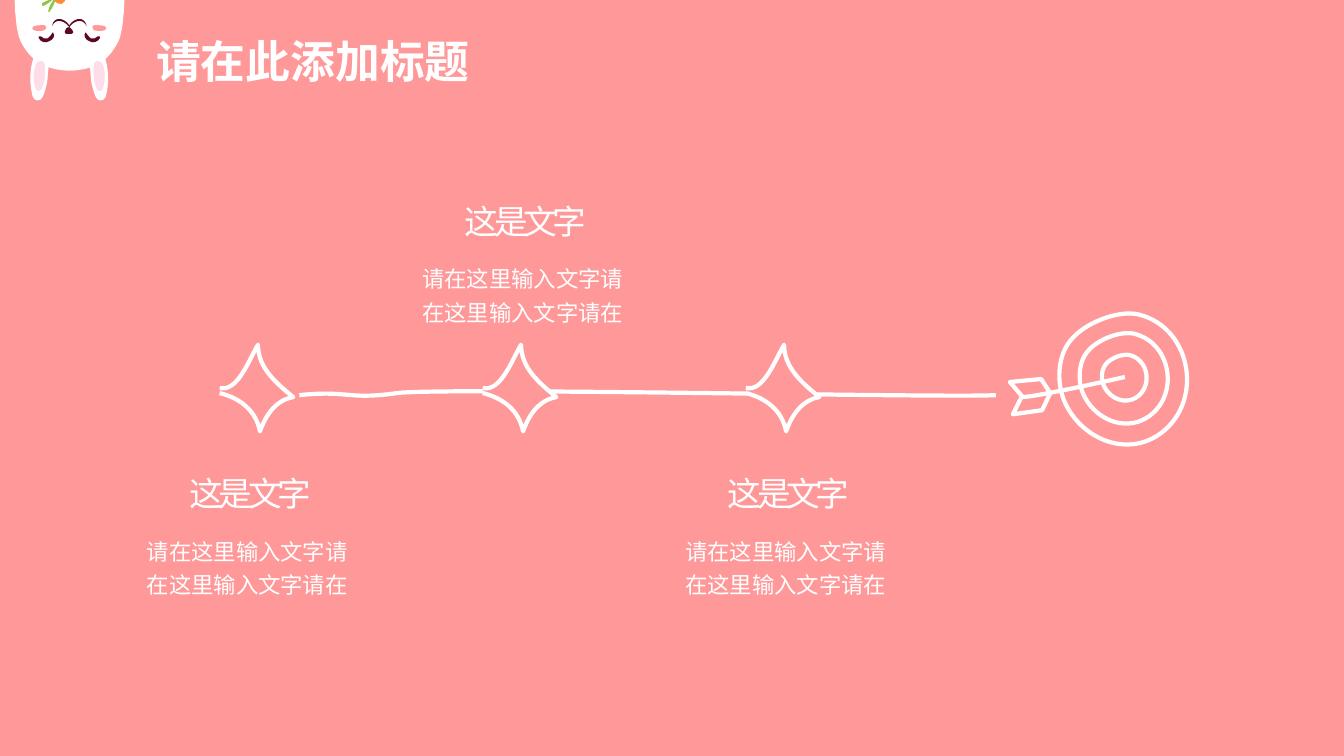
"""Build a pink timeline slide with three stars, a target and a rabbit."""
import pptx
import pptx.dml.color
import pptx.enum.text
import pptx.oxml.ns
import pptx.util
from lxml import etree

Cm = pptx.util.Cm
Pt = pptx.util.Pt
qn = pptx.oxml.ns.qn
INCH = 2.54
FONT = "Noto Sans CJK JP"
HUES = {
    "pink": "FF9899",
    "white": "FFFFFF",
    "wine": "5B0822",
    "blush": "FFDCEA",
    "leaf": "8DC541",
    "carrot": "FF8D35",
}
RGB = {name: pptx.dml.color.RGBColor.from_string(code) for name, code in HUES.items()}


def draw(nums, fill=None, line=None, width=3, bend=True):
    """Draw an outline in hundredths of an inch; bend joins it by cubic curves."""
    dots = [(Cm(x * INCH / 100), Cm(y * INCH / 100)) for x, y in zip(nums[::2], nums[1::2])]
    pen = slide.shapes.build_freeform(*dots[0], scale=1.0)
    pen.add_line_segments(dots[1:], close=dots[0] == dots[-1])
    shape = pen.convert_to_shape()
    shape.shadow.inherit = False
    if bend:
        legs = list(shape._element.iter(qn("a:lnTo")))
        for i in range(0, len(legs), 3):
            curve = etree.Element(qn("a:cubicBezTo"))
            legs[i].addprevious(curve)
            for leg in legs[i:i + 3]:
                curve.append(leg[0])
                leg.getparent().remove(leg)
    if fill:
        shape.fill.solid()
        shape.fill.fore_color.rgb = RGB[fill]
    else:
        shape.fill.background()
    if line:
        shape.line.color.rgb = RGB[line]
        shape.line.width = Pt(width)
    else:
        shape.line.fill.background()


def write(shape, text, size, align, bold=False, space=None, lead=None):
    """Fill a shape with one styled white paragraph."""
    frame = shape.text_frame
    frame.word_wrap = True
    frame.auto_size = pptx.enum.text.MSO_AUTO_SIZE.NONE
    frame.vertical_anchor = pptx.enum.text.MSO_ANCHOR.TOP
    frame.text = text
    para = frame.paragraphs[0]
    para.alignment = align
    if lead:
        para.line_spacing = lead
    run = para.runs[0]
    run.font.size = Pt(size)
    run.font.bold = bold
    run.font.name = FONT
    run.font.color.rgb = RGB["white"]
    props = run.font._element
    etree.SubElement(props, qn("a:ea")).set("typeface", FONT)
    if space:
        props.set("spc", str(space))


deck = pptx.Presentation()
deck.slide_width = Cm(33.87)
deck.slide_height = Cm(19.05)
slide = deck.slides.add_slide(deck.slide_layouts[5])
slide.background.fill.solid()
slide.background.fill.fore_color.rgb = RGB["pink"]
LEFT = pptx.enum.text.PP_ALIGN.LEFT
MID = pptx.enum.text.PP_ALIGN.CENTER

title = slide.shapes.title
title.left, title.top, title.width, title.height = Cm(3.56), Cm(0.71), Cm(8.66), Cm(1.63)
write(title, "请在此添加标题", 32, MID, bold=True)

body = [15, 11, 16, 18, 16, 26, 18, 33, 19, 40, 24, 48, 29, 54, 39, 65, 51, 69, 65, 70,
        67, 70, 72, 70, 73, 70, 87, 69, 100, 65, 109, 54, 114, 48, 119, 40, 120, 33,
        122, 26, 122, 18, 123, 11, 124, -10, 124, -30, 119, -41,
        113, -46, 105, -50, 88, -50, 82, -50, 56, -50, 50, -50,
        33, -50, 25, -46, 19, -41, 14, -30, 14, -10, 15, 11]
draw(body, "white")

nose = [65, 32, 65, 33, 66, 33, 68, 33, 70, 33, 72, 33, 72, 32,
        72, 31, 70, 29, 69, 28, 67, 27, 65, 30, 65, 32]
draw(nose, "wine", "wine", 1.13)

smile = [86, 26, 85, 21, 82, 18, 77, 19, 73, 20, 68, 24, 68, 28,
         70, 25, 73, 22, 77, 21, 81, 20, 84, 22, 86, 26]
eye = [97, 36, 95, 38, 93, 39, 90, 38, 87, 36, 87, 34, 85, 32,
       82, 35, 85, 40, 89, 41, 92, 43, 97, 42, 99, 38, 100, 37, 99, 35, 97, 36]
cheek = [104, 26, 101, 25, 97, 25, 94, 25, 91, 25, 91, 29, 93, 30,
         97, 31, 101, 31, 104, 30, 106, 29, 106, 27, 104, 26]
ear = [90, 73, 90, 81, 92, 89, 95, 96, 97, 101, 103, 101, 105, 96,
       107, 88, 108, 79, 107, 71, 106, 63, 105, 55, 98, 50,
       96, 48, 93, 51, 92, 53, 88, 58, 89, 67, 90, 73]
lobe = [93, 74, 93, 79, 94, 83, 96, 88, 97, 91, 102, 91, 102, 88,
        104, 83, 104, 78, 104, 72, 103, 69, 103, 62, 99, 61, 91, 58, 93, 70, 93, 74]
for part, hue in ((smile, "wine"), (eye, "wine"), (cheek, "pink"), (ear, "white"), (lobe, "blush")):
    draw(part, hue)
    draw([n if i % 2 else 137.5 - n for i, n in enumerate(part)], hue)

stem = [54, -2, 52, 2, 48, 7, 48, 11, 47, 12, 49, 12, 49, 12,
        52, 8, 55, 2, 55, -2, 55, -2, 54, -2, 54, -2]
frond = [53, -4, 50, 0, 46, 1, 42, 3, 41, 4, 42, 7, 43, 6,
         47, 4, 52, 1, 54, -3, 54, -4, 53, -4, 53, -4]
root = [54, 1, 56, 3, 58, 4, 61, 4, 64, 3, 65, 0, 66, -3, 68, -7, 69, -11, 71, -15,
        73, -18, 76, -24, 75, -28, 74, -36, 61, -24, 58, -21,
        56, -19, 53, -18, 51, -16, 45, -10, 49, -3, 54, 1]
draw(stem, "leaf")
draw(frond, "leaf")
draw(root, "carrot")

road = [297, 392, 347, 387, 344, 397, 394, 390, 440, 384, 943, 395, 988, 392]
draw(road, line="white")

hub = (1116, 374)
ring = [-57, 30, -40, 61, -1, 78, 31, 59, 79, 30, 69, -48, 14, -62,
        -7, -67, -41, -53, -54, -36, -68, -19, -68, 11, -57, 30]
for scale, fill in ((1, None), (0.69, None), (0.35, "pink")):
    draw([hub[i % 2] + n * scale for i, n in enumerate(ring)], fill, "white")
fletch = [1014, 393, 1002, 379, 1033, 376, 1042, 390, 1034, 407, 1005, 411, 1014, 393]
draw(fletch, "pink", "white", bend=False)
draw([*hub, *hub, 1033, 393, 1014, 394], line="white")

star = [0, 385, 18, 389, 29, 357, 38, 342, 38, 365, 56, 380, 73, 394,
        56, 397, 46, 411, 40, 428, 36, 407, 20, 395, 0, 390]
for k in range(3):
    draw([n if i % 2 else 218 + 261 * k + n for i, n in enumerate(star)], "pink", "white")

for left, top in ((3.45, 11.79), (10.39, 4.93), (17.02, 11.79)):
    head = slide.shapes.add_textbox(Cm(left + 0.76), Cm(top), Cm(4.19), Cm(1.27))
    write(head, "这是文字", 24, MID, space=-300)
    note = slide.shapes.add_textbox(Cm(left), Cm(top + 1.47), Cm(5.72), Cm(1.88))
    write(note, "请在这里输入文字请在这里输入文字请在", 16, LEFT, lead=1.25)

deck.save("out.pptx")
